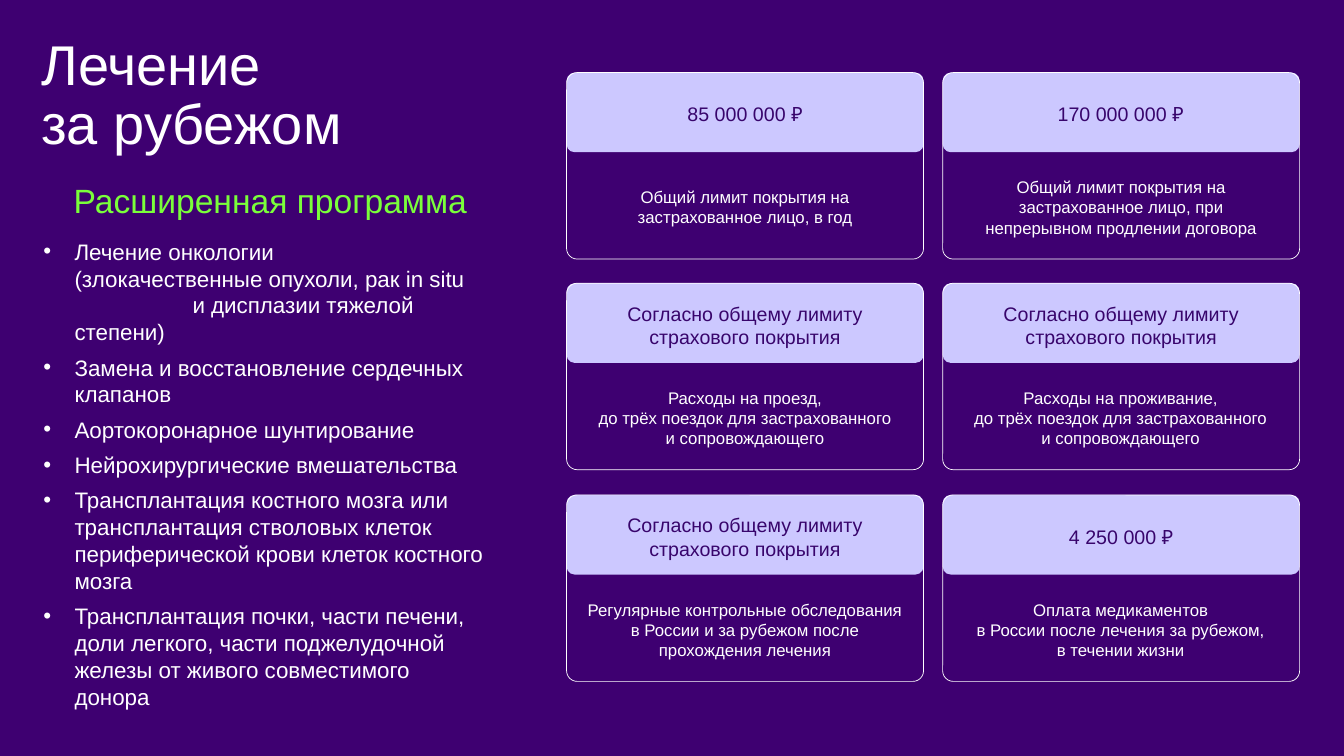
import pptx
import pptx.util
import pptx.dml.color
import pptx.enum.shapes
import pptx.enum.text
import pptx.oxml.ns
from lxml import etree

PX = 9144  # 100 px to the inch
RGB = pptx.dml.color.RGBColor
PURPLE = RGB(0x3E, 0x00, 0x71)
INK = RGB(0x38, 0x05, 0x6C)
LILAC = RGB(0xCC, 0xC8, 0xFF)
GREEN = RGB(0x7A, 0xFF, 0x3A)
WHITE = RGB(0xFF, 0xFF, 0xFF)
ALIGN = pptx.enum.text.PP_ALIGN
ANCHOR = pptx.enum.text.MSO_ANCHOR
Pt = pptx.util.Pt
qn = pptx.oxml.ns.qn

deck = pptx.Presentation()
deck.slide_width, deck.slide_height = 1333 * PX, 750 * PX
slide = deck.slides.add_slide(deck.slide_layouts[6])
slide.background.fill.solid()
slide.background.fill.fore_color.rgb = PURPLE


def add_text(text, *, box, size, color=WHITE, align=ALIGN.LEFT,
             anchor=ANCHOR.TOP, leading=None, after=None, bullet=False):
    """Each item of a list becomes a paragraph; a newline breaks a line."""
    frame = slide.shapes.add_textbox(*(v * PX for v in box)).text_frame
    frame.word_wrap = True
    frame.vertical_anchor = anchor
    frame.margin_left = frame.margin_right = 0
    frame.margin_top = frame.margin_bottom = 0
    for i, part in enumerate(text if isinstance(text, list) else [text]):
        para = frame.add_paragraph() if i else frame.paragraphs[0]
        para.text = part
        para.alignment = align
        if leading:
            para.line_spacing = Pt(leading)
        if after:
            para.space_after = Pt(after)
        if bullet:
            props = para._p.get_or_add_pPr()
            props.set("marL", str(31 * PX))
            props.set("indent", str(-31 * PX))
            etree.SubElement(props, qn("a:buFont"), typeface="Arial")
            etree.SubElement(props, qn("a:buChar"), char="•")
            if "\t" in part:
                tabs = etree.SubElement(props, qn("a:tabLst"))
                etree.SubElement(tabs, qn("a:tab"), pos=str(148 * PX), algn="l")
        for gap in para._p.findall(qn("a:br")):
            etree.SubElement(gap, qn("a:rPr"), sz=str(size * 100))
        for font in [para.font] + [run.font for run in para.runs]:
            font.name = "Arial"
            font.size = Pt(size)
            font.color.rgb = color


def add_panel(box, radius, fill=None):
    """Rounded box: filled if a fill is given, else a thin white outline."""
    panel = slide.shapes.add_shape(
        pptx.enum.shapes.MSO_SHAPE.ROUNDED_RECTANGLE, *(v * PX for v in box))
    panel.shadow.inherit = False
    panel.adjustments[0] = radius / min(box[2:])
    if fill:
        panel.fill.solid()
        panel.fill.fore_color.rgb = fill
        panel.line.fill.background()
    else:
        panel.fill.background()
        panel.line.color.rgb = WHITE
        panel.line.width = Pt(0.5)


add_text("Лечение\nза рубежом", box=(41, 38, 867, 118), size=40, leading=42)
add_text("Расширенная программа", box=(73, 181, 505, 38), size=24,
         color=GREEN, leading=27)
add_text([
    "Лечение онкологии\n(злокачественные опухоли, рак in situ\n"
    "\tи дисплазии тяжелой\nстепени)",
    "Замена и восстановление сердечных клапанов",
    "Аортокоронарное шунтирование",
    "Нейрохирургические вмешательства",
    "Трансплантация костного мозга или трансплантация стволовых клеток "
    "периферической крови клеток костного мозга",
    "Трансплантация почки, части печени, доли легкого, части поджелудочной "
    "железы от живого совместимого донора",
], box=(43, 236, 444, 480), size=16, after=6, bullet=True)

LIMIT = "Согласно общему лимиту страхового покрытия"
# left, top, then text, width and height of the head and of the body
CARDS = [
    (562, 72, "85 000 000 ₽", 192, 24,
     "Общий лимит покрытия на застрахованное лицо, в год", 222, 40),
    (935, 72, "170 000 000 ₽", 289, 24,
     "Общий лимит покрытия на застрахованное лицо, при "
     "непрерывном продлении договора", 298, 61),
    (562, 281, LIMIT, 316, 47,
     "Расходы на проезд,\nдо трёх поездок для застрахованного\n"
     "и сопровождающего", 326, 61),
    (935, 281, LIMIT, 264, 47,
     "Расходы на проживание,\nдо трёх поездок для застрахованного\n"
     "и сопровождающего", 311, 61),
    (562, 491, LIMIT, 316, 47,
     "Регулярные контрольные обследования\n"
     "в России и за рубежом после прохождения лечения", 326, 61),
    (935, 491, "4 250 000 ₽", 264, 24,
     "Оплата медикаментов\nв России после лечения за рубежом,\n"
     "в течении жизни", 311, 61),
]
CARD_W, CARD_H, HEAD_H, RADIUS = 354, 185, 79, 8
for left, top, head, head_w, head_h, body, body_w, body_h in CARDS:
    add_panel((left, top, CARD_W, HEAD_H), RADIUS, LILAC)
    for text, wide, high, mid, size, color in (
            (head, head_w, head_h, 41, 14, INK),
            (body, body_w, body_h, 133, 12, WHITE)):
        add_text(text, size=size, color=color, align=ALIGN.CENTER,
                 anchor=ANCHOR.MIDDLE,
                 box=(left + (CARD_W - wide) // 2, top + mid - high // 2,
                      wide, high))
    add_panel((left, top, CARD_W, CARD_H), 10.5)

deck.save("out.pptx")
